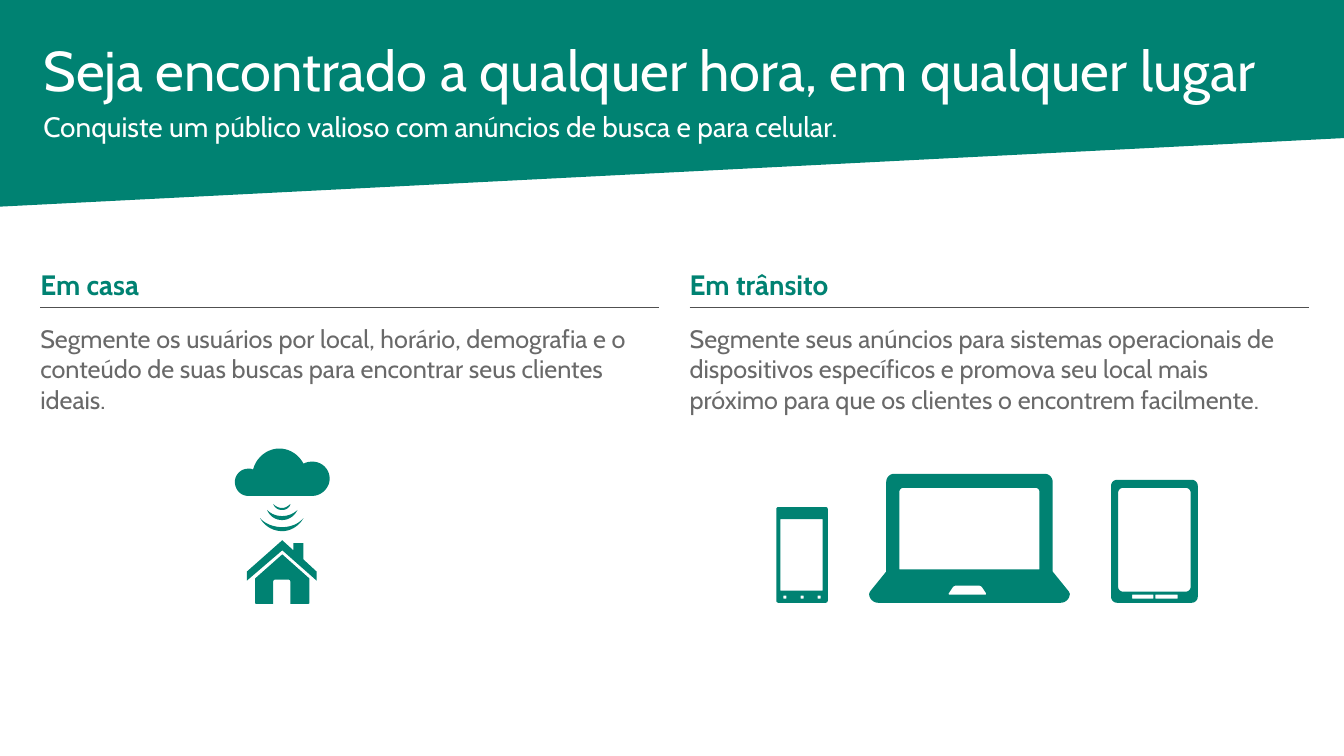
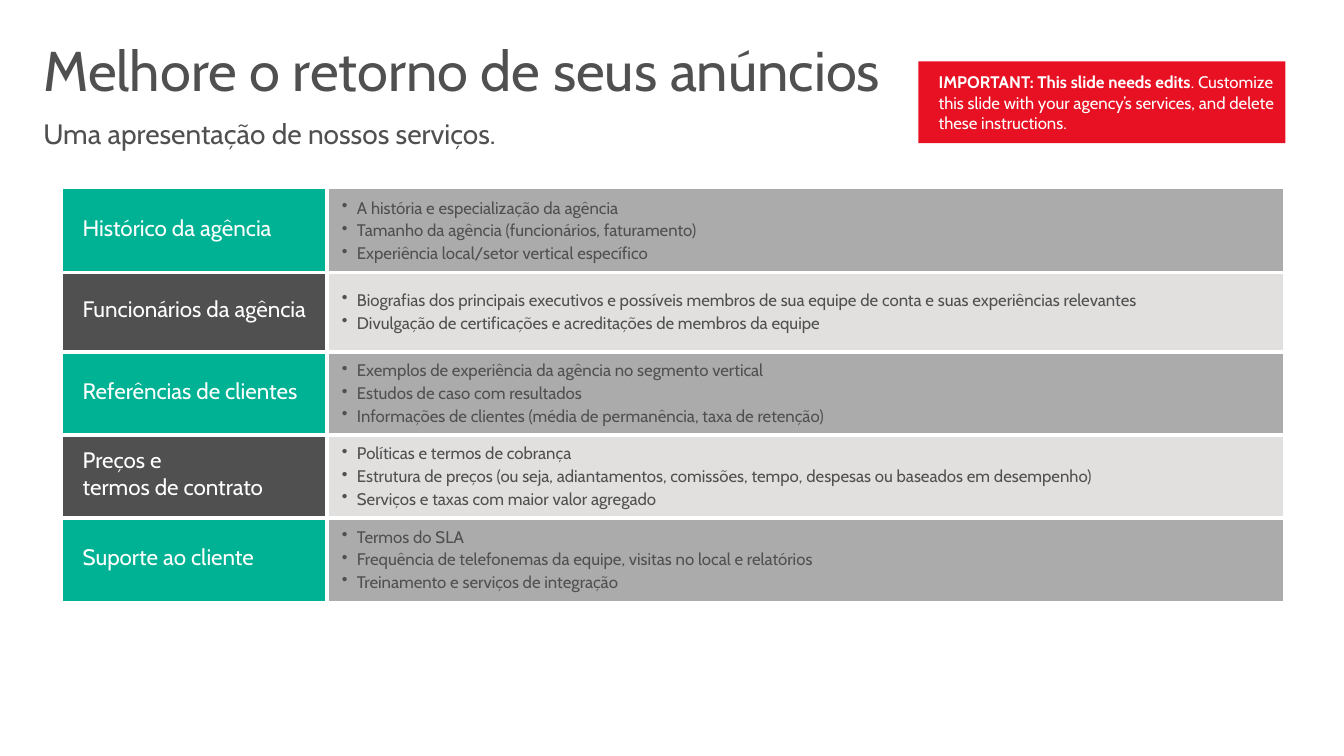
import math
from dataclasses import dataclass
from typing import NamedTuple

from lxml import etree
from pptx import Presentation, util as u
from pptx.dml.color import RGBColor
from pptx.enum import shapes, text
from pptx.oxml.ns import qn

EMU_PER_PX = 9144
FONT = "Cabin"
COLORS = {
    "teal": "008272",
    "green": "00B294",
    "dark": "505050",
    "body": "696969",
    "gray": "ABABAB",
    "light": "E1E0DF",
    "red": "E81123",
    "white": "FFFFFF",
}
MARGIN = 43
SLIDE_WIDTH, SLIDE_HEIGHT = 1333, 750


class Box(NamedTuple):
    left: int
    top: int
    width: int
    height: int


class Insets(NamedTuple):
    left: int = 0
    top: int = 0
    right: int = 0
    bottom: int = 0


class Point(NamedTuple):
    x: float
    y: float


class Corner(NamedTuple):
    x: int
    y: int
    radius: int = 0


@dataclass(frozen=True)
class Column:
    left: int
    heading: str
    body: str


@dataclass(frozen=True)
class Service:
    name: str
    details: tuple[str, ...]
    height: int = 82


COLUMNS = (
    Column(40, "Em casa", "Segmente os usuários por local, horário, demografia e o conteúdo "
           "de suas buscas para encontrar seus clientes ideais."),
    Column(684, "Em trânsito", "Segmente seus anúncios para sistemas operacionais de dispositivos "
           "específicos e promova seu local mais próximo para que os clientes o encontrem "
           "facilmente."),
)
SERVICES = (
    Service("Histórico da agência", (
        "A história e especialização da agência",
        "Tamanho da agência (funcionários, faturamento)",
        "Experiência local/setor vertical específico")),
    Service("Funcionários da agência", (
        "Biografias dos principais executivos e possíveis membros de sua equipe de conta "
        "e suas experiências relevantes",
        "Divulgação de certificações e acreditações de membros da equipe"), 79),
    Service("Referências de clientes", (
        "Exemplos de experiência da agência no segmento vertical",
        "Estudos de caso com resultados",
        "Informações de clientes (média de permanência, taxa de retenção)")),
    Service("Preços e\ntermos de contrato", (
        "Políticas e termos de cobrança",
        "Estrutura de preços (ou seja, adiantamentos, comissões, tempo, despesas "
        "ou baseados em desempenho)",
        "Serviços e taxas com maior valor agregado")),
    Service("Suporte ao cliente", (
        "Termos do SLA",
        "Frequência de telefonemas da equipe, visitas no local e relatórios",
        "Treinamento e serviços de integração")),
)


def px(length: float) -> u.Emu:
    return u.Emu(round(length * EMU_PER_PX))


def rgb(name: str) -> RGBColor:
    return RGBColor.from_string(COLORS[name])


def write(frame, *paragraphs: str, size: int, color: str, bold: bool = False,
          bold_lead: str = "", spacing: float | None = None, after: int = 0,
          bullet: str = "") -> None:
    """Fill a text frame; bold_lead is a bold run before the first paragraph."""
    frame.word_wrap = True
    for index, content in enumerate(paragraphs):
        paragraph = frame.paragraphs[0] if index == 0 else frame.add_paragraph()
        paragraph.alignment = text.PP_ALIGN.LEFT
        paragraph.space_before = u.Pt(0)
        paragraph.space_after = u.Pt(after)
        if spacing:
            paragraph.line_spacing = spacing
        if bullet:
            properties = paragraph._p.get_or_add_pPr()
            properties.set("marL", str(px(15)))
            properties.set("indent", str(px(-15)))
            etree.SubElement(properties, qn("a:buChar")).set("char", bullet)
        if bold_lead and index == 0:
            paragraph.add_run().text = bold_lead
            paragraph.add_run().text = content
        else:
            paragraph.text = content
        for font in (paragraph.font, *(run.font for run in paragraph.runs)):
            font.name = FONT
            font.size = u.Pt(size)
            font.bold = bold
            font.color.rgb = rgb(color)
        if bold_lead and index == 0:
            paragraph.runs[0].font.bold = True


def set_insets(target, insets: Insets) -> None:
    target.margin_left, target.margin_top, target.margin_right, target.margin_bottom = map(px, insets)


def add_text(slide, box: Box, content: str, insets: Insets = Insets(),
             anchor=text.MSO_ANCHOR.TOP, **text_format) -> None:
    frame = slide.shapes.add_textbox(*map(px, box)).text_frame
    set_insets(frame, insets)
    frame.vertical_anchor = anchor
    write(frame, content, **text_format)


def add_headings(slide, title: str, subtitle: str, subtitle_top: int, color: str) -> None:
    shape = slide.shapes.title
    shape.left, shape.top, shape.width, shape.height = map(px, (MARGIN, 43, 1248, 55))
    frame = shape.text_frame
    set_insets(frame, Insets())
    frame.vertical_anchor = text.MSO_ANCHOR.TOP
    frame.auto_size = text.MSO_AUTO_SIZE.NONE
    write(frame, title, size=40, color=color, spacing=0.9)
    add_text(slide, Box(MARGIN, subtitle_top, 874, 58), subtitle, size=20, color=color, spacing=0.9)


def bezier(start: Point, first: Point, second: Point, end: Point, steps: int = 10) -> list[Point]:
    points = []
    for step in range(1, steps + 1):
        t = step / steps
        weights = ((1 - t) ** 3, 3 * t * (1 - t) ** 2, 3 * t * t * (1 - t), t ** 3)
        controls = (start, first, second, end)
        points.append(Point(*(sum(w * c[axis] for w, c in zip(weights, controls))
                              for axis in (0, 1))))
    return points


def curved(start: tuple, *curves: tuple) -> list[Point]:
    """Outline of cubic curves, each given as two control points and an end."""
    points = [Point(*start)]
    for x1, y1, x2, y2, x3, y3 in curves:
        points += bezier(points[-1], Point(x1, y1), Point(x2, y2), Point(x3, y3))
    return points


def toward(start, end, distance: float) -> Point:
    share = distance / math.dist(start[:2], end[:2])
    return Point(start[0] + (end[0] - start[0]) * share, start[1] + (end[1] - start[1]) * share)


def polygon(*corners: tuple) -> list[Point]:
    """Outline of straight sides; a corner's third value is its radius."""
    points = []
    corners = [Corner(*corner) for corner in corners]
    for index, corner in enumerate(corners):
        if not corner.radius:
            points.append(Point(corner.x, corner.y))
            continue
        entry = toward(corner, corners[index - 1], corner.radius)
        leave = toward(corner, corners[(index + 1) % len(corners)], corner.radius)
        handle = corner.radius * 0.45
        points.append(entry)
        points += bezier(entry, toward(corner, entry, handle), toward(corner, leave, handle), leave)
    return points


def rectangle(left: int, top: int, right: int, bottom: int, radius: int = 0) -> list[Point]:
    return polygon((left, top, radius), (right, top, radius),
                   (right, bottom, radius), (left, bottom, radius))


def add_outlines(slide, *outlines: list[Point], color: str = "teal") -> None:
    """Draw one freeform; an outline inside another is a hole."""
    contours = [[(px(x), px(y)) for x, y in outline] for outline in outlines]
    builder = slide.shapes.build_freeform(*contours[0][0], scale=1.0)
    for index, contour in enumerate(contours):
        if index:
            builder.move_to(*contour[0])
        builder.add_line_segments(contour[1:], close=True)
    shape = builder.convert_to_shape()
    shape.shadow.inherit = False
    shape.fill.solid()
    shape.fill.fore_color.rgb = rgb(color)
    shape.line.fill.background()


def add_rule(slide, left: int, top: int, width: int) -> None:
    rule = slide.shapes.add_connector(shapes.MSO_CONNECTOR.STRAIGHT,
                                      *map(px, (left, top, left + width, top)))
    rule.line.color.rgb = rgb("dark")
    rule.line.width = u.Pt(0.75)
    etree.SubElement(rule._element.spPr, qn("a:effectLst"))


def add_column(slide, column: Column) -> None:
    insets = Insets(0, 16, 20, 16)
    add_text(slide, Box(column.left, 260, 614, 44), column.heading, insets,
             text.MSO_ANCHOR.MIDDLE, size=20, color="teal", bold=True)
    add_text(slide, Box(column.left, 305, 614, 294), column.body, insets, size=18, color="body")
    add_rule(slide, column.left, 305, 614)


def add_home_icon(slide) -> None:
    cloud = curved((310, 458), (306, 458, 303, 459, 301, 460), (297, 452, 288, 445, 277, 445),
                   (265, 445, 254, 454, 251, 466), (250, 465, 248, 465, 246, 465),
                   (239, 465, 233, 471, 233, 478), (233, 486, 239, 492, 246, 492),
                   (267, 492, 289, 492, 310, 492), (319, 492, 327, 484, 327, 475),
                   (327, 465, 319, 458, 310, 458))
    waves = (
        curved((301, 514), (296, 520, 288, 523, 280, 523), (272, 523, 263, 520, 258, 514),
               (261, 520, 269, 527, 280, 527), (290, 527, 298, 520, 301, 514)),
        curved((295, 506), (291, 510, 285, 512, 280, 512), (274, 512, 269, 510, 265, 506),
               (267, 511, 272, 516, 280, 516), (287, 516, 293, 511, 295, 506)),
        curved((288, 500), (286, 502, 283, 504, 280, 504), (276, 504, 273, 502, 271, 500),
               (272, 503, 275, 506, 280, 506), (284, 506, 288, 503, 288, 500)),
    )
    roof = polygon((301, 539), (291, 539), (291, 546), (280, 536), (245, 567), (245, 576),
                   (280, 546), (314, 576), (314, 567), (301, 555))
    house = polygon((253, 574), (280, 550), (307, 574), (307, 599, 1), (288, 599),
                    (288, 575, 2), (271, 575, 2), (271, 599), (253, 599, 1))
    add_outlines(slide, cloud, *waves, roof, house)


def add_device_icons(slide) -> None:
    add_outlines(slide, rectangle(770, 503, 821, 598, 2), rectangle(774, 515, 816, 586),
                 *(rectangle(left, 591, left + 3, 594) for left in (777, 794, 811)))
    laptop = polygon((879, 470, 8), (1044, 470, 8), (1044, 567), (1061, 588, 2),
                     (1061, 598, 9), (862, 598, 9), (862, 588, 2), (879, 567))
    touchpad = polygon((946, 581, 2), (973, 581, 2), (979, 590, 2), (940, 590, 2))
    screen = polygon((892, 484, 4), (1031, 484, 4), (1031, 565), (892, 565))
    add_outlines(slide, laptop, touchpad, screen)
    add_outlines(slide, rectangle(1102, 476, 1188, 598, 6), rectangle(1109, 484, 1181, 587, 5),
                 rectangle(1123, 590, 1144, 594), rectangle(1146, 590, 1168, 594))


def add_callout(slide, box: Box, lead: str, content: str) -> None:
    shape = slide.shapes.add_shape(shapes.MSO_SHAPE.RECTANGLE, *map(px, box))
    shape.shadow.inherit = False
    shape.fill.solid()
    shape.fill.fore_color.rgb = rgb("red")
    shape.line.fill.background()
    shape.text_frame.vertical_anchor = text.MSO_ANCHOR.MIDDLE
    set_insets(shape.text_frame, Insets(20, 10, 10, 10))
    write(shape.text_frame, content, size=12, color="white", bold_lead=lead)


def style_cell(cell, fill: str, insets: Insets, inner_sides: dict[str, bool]) -> None:
    """Set fill and insets, with white borders on the inner sides only."""
    properties = cell._tc.get_or_add_tcPr()
    for side, inner in inner_sides.items():
        border = etree.SubElement(properties, qn(f"a:ln{side}"), w=str(u.Pt(3)))
        if inner:
            color = etree.SubElement(etree.SubElement(border, qn("a:solidFill")), qn("a:srgbClr"))
            color.set("val", COLORS["white"])
        else:
            etree.SubElement(border, qn("a:noFill"))
    cell.fill.solid()
    cell.fill.fore_color.rgb = rgb(fill)
    cell.vertical_anchor = text.MSO_ANCHOR.MIDDLE
    set_insets(cell, insets)


def add_services_table(slide, left: int, top: int, widths: tuple[int, int]) -> None:
    height = sum(service.height for service in SERVICES)
    table = slide.shapes.add_table(len(SERVICES), len(widths),
                                   *map(px, (left, top, sum(widths), height))).table
    table.first_row = table.horz_banding = False
    for column, width in zip(table.columns, widths):
        column.width = px(width)
    for row, service in enumerate(SERVICES):
        table.rows[row].height = px(service.height)
        name, details = table.cell(row, 0), table.cell(row, 1)
        name_fill, details_fill = ("dark", "light") if row % 2 else ("green", "gray")
        vertical = {"T": row > 0, "B": row < len(SERVICES) - 1}
        style_cell(name, name_fill, Insets(20, 10, 20, 15), {"L": False, "R": True, **vertical})
        style_cell(details, details_fill, Insets(15, 10, 10, 10), {"L": True, "R": False, **vertical})
        write(name.text_frame, service.name.replace("\n", "\v"), size=16, color="white")
        write(details.text_frame, *service.details, size=12, color="dark",
              spacing=0.9, after=3, bullet="•")


def build_reach_slide(slide) -> None:
    add_outlines(slide, polygon((0, 0), (SLIDE_WIDTH, 0), (SLIDE_WIDTH, 137), (0, 205)))
    # The title placeholder comes first on the slide, so raise it above the band.
    slide.shapes._spTree.append(slide.shapes.title._element)
    add_headings(slide, "Seja encontrado a qualquer hora, em qualquer lugar",
                 "Conquiste um público valioso com anúncios de busca e para celular.", 112, "white")
    for column in COLUMNS:
        add_column(slide, column)
    add_home_icon(slide)
    add_device_icons(slide)


def build_services_slide(slide) -> None:
    add_headings(slide, "Melhore o retorno de seus anúncios",
                 "Uma apresentação de nossos serviços.", 119, "dark")
    add_callout(slide, Box(911, 61, 364, 81), "IMPORTANT: This slide needs edits",
                ". Customize this slide with your agency’s services, and delete these instructions.")
    add_services_table(slide, 62, 188, (262, 949))


def main() -> None:
    presentation = Presentation()
    presentation.slide_width, presentation.slide_height = px(SLIDE_WIDTH), px(SLIDE_HEIGHT)
    title_only = presentation.slide_layouts[5]
    for build in (build_reach_slide, build_services_slide):
        build(presentation.slides.add_slide(title_only))
    presentation.save("out.pptx")


if __name__ == "__main__":
    main()
